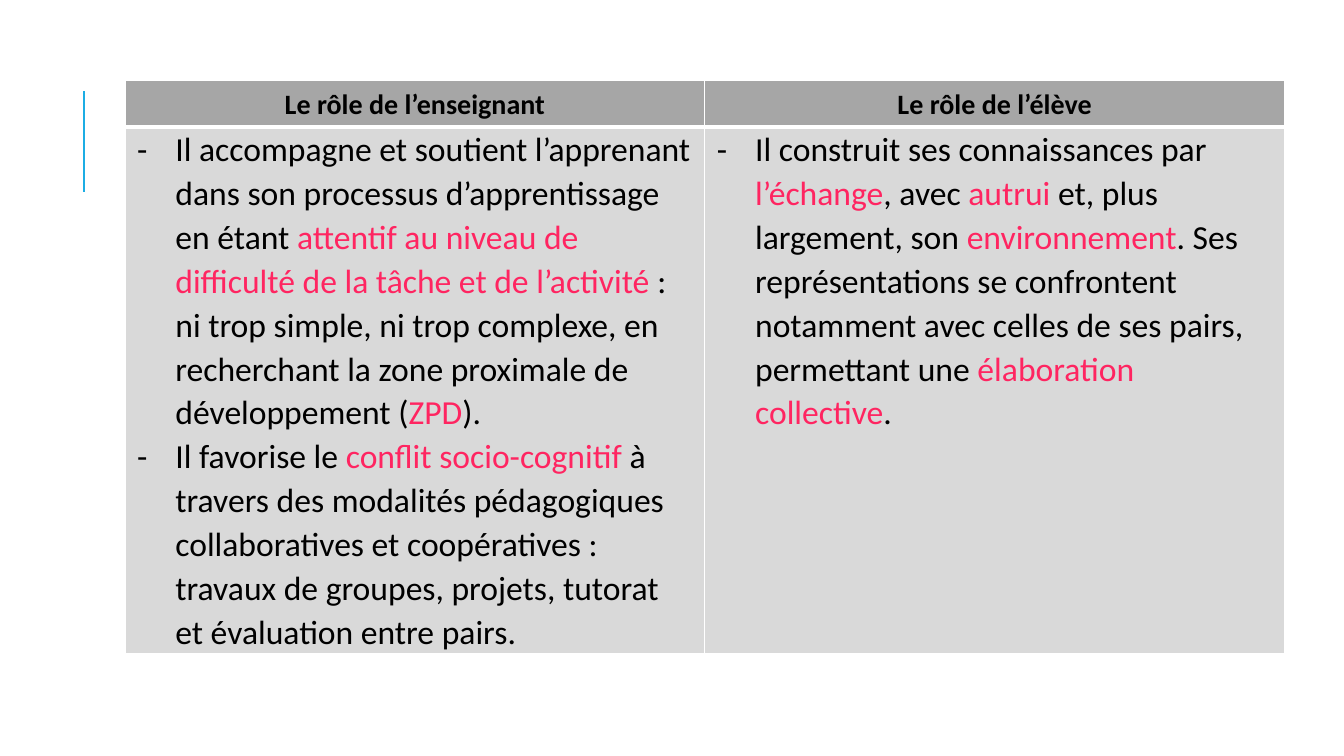
from lxml.etree import SubElement
from pptx import Presentation
from pptx.dml.color import RGBColor
from pptx.enum.shapes import MSO_CONNECTOR
from pptx.enum.text import MSO_ANCHOR, PP_ALIGN
from pptx.oxml import parse_xml
from pptx.oxml.ns import nsdecls, qn
from pptx.util import Inches, Pt

COLORS = {
    "rule": "1CADE4",
    "header": "A6A6A6",
    "body": "D9D9D9",
    "border": "FFFFFF",
    "text": "000000",
    "accent": "FF2561",
}
FONT = "Calibri"
HEADER_FORMAT = {"name": FONT, "size": Pt(20), "bold": True}
BODY_FORMAT = {"name": FONT, "size": Pt(24), "bold": False}
INDENT = Inches(0.38)

# Each role: heading and its points; asterisks enclose accented words
ROLES = [
    ("Le rôle de l’enseignant", [
        "Il accompagne et soutient l’apprenant dans son processus d’apprentissage "
        "en étant *attentif au niveau de difficulté de la tâche et de l’activité *"
        ": ni trop simple, ni trop complexe, en recherchant la zone proximale de "
        "développement (*ZPD*).",
        "Il favorise le *conflit socio-cognitif *à travers des modalités "
        "pédagogiques collaboratives et coopératives : travaux de groupes, "
        "projets, tutorat et évaluation entre pairs.",
    ]),
    ("Le rôle de l’élève", [
        "Il construit ses connaissances par *l’échange*, avec *autrui* et, plus "
        "largement, son *environnement*. Ses représentations se confrontent "
        "notamment avec celles de ses pairs, permettant une "
        "*élaboration collective*.",
    ]),
]


def rgb(key):
    return RGBColor.from_string(COLORS[key])


def add_borders(cell, top, bottom):
    """Draw the four cell borders, with widths in points."""
    widths = {"lnL": 1, "lnR": 1, "lnT": top, "lnB": bottom}
    properties = cell._tc.get_or_add_tcPr()
    for position, (tag, width) in enumerate(widths.items()):
        properties.insert(position, parse_xml(
            f'<a:{tag} {nsdecls("a")} w="{Pt(width)}"><a:solidFill>'
            f'<a:srgbClr val="{COLORS["border"]}"/></a:solidFill></a:{tag}>'))


def style_cell(cell, fill, anchor, top, bottom):
    cell.fill.solid()
    cell.fill.fore_color.rgb = rgb(fill)
    cell_format = {
        "margin_left": Inches(0.12), "margin_right": Inches(0.12),
        "margin_top": 0, "margin_bottom": 0, "vertical_anchor": anchor,
    }
    for name, value in cell_format.items():
        setattr(cell, name, value)
    add_borders(cell, top, bottom)


def add_dash(paragraph):
    """Give the paragraph a hanging dash bullet."""
    properties = paragraph._p.get_or_add_pPr()
    properties.set("marL", str(INDENT))
    properties.set("indent", str(-INDENT))
    SubElement(properties, qn("a:buFont")).set("typeface", FONT)
    SubElement(properties, qn("a:buChar")).set("char", "-")


def write_text(paragraph, text, text_format, space_after):
    paragraph.line_spacing = 1.07
    paragraph.space_after = Pt(space_after)
    for index, part in enumerate(text.split("*")):
        run = paragraph.add_run()
        run.text = part
        for name, value in text_format.items():
            setattr(run.font, name, value)
        run.font.color.rgb = rgb("accent" if index % 2 else "text")


def add_side_rule(slide, left, top, height):
    rule = slide.shapes.add_connector(
        MSO_CONNECTOR.STRAIGHT, left, top + height, left, top)
    rule.line.color.rgb = rgb("rule")
    rule.line.width = Pt(1.5)
    SubElement(rule._element.spPr, qn("a:effectLst"))


def add_roles_table(slide, left, top, width, header_height, body_height):
    roles_table = slide.shapes.add_table(
        2, len(ROLES), left, top, width, header_height + body_height).table
    roles_table.rows[0].height = header_height
    roles_table.rows[1].height = body_height

    for column, (heading, points) in enumerate(ROLES):
        # Heading
        header = roles_table.cell(0, column)
        style_cell(header, "header", MSO_ANCHOR.MIDDLE, top=1, bottom=3)
        title = header.text_frame.paragraphs[0]
        title.alignment = PP_ALIGN.CENTER
        write_text(title, heading, HEADER_FORMAT, space_after=8)

        # Points
        body = roles_table.cell(1, column)
        style_cell(body, "body", MSO_ANCHOR.TOP, top=3, bottom=1)
        frame = body.text_frame
        for index, point in enumerate(points):
            paragraph = frame.add_paragraph() if index else frame.paragraphs[0]
            add_dash(paragraph)
            write_text(paragraph, point, BODY_FORMAT,
                       space_after=8 if len(points) == 1 else 0)


def main():
    presentation = Presentation()
    presentation.slide_width = Inches(13.33)
    presentation.slide_height = Inches(7.5)
    slide = presentation.slides.add_slide(presentation.slide_layouts[6])

    add_side_rule(slide, Inches(0.83), Inches(0.9), Inches(1))
    add_roles_table(slide, Inches(1.24), Inches(0.8), Inches(11.5),
                    Inches(0.46), Inches(5.01))
    presentation.save("out.pptx")


if __name__ == "__main__":
    main()
